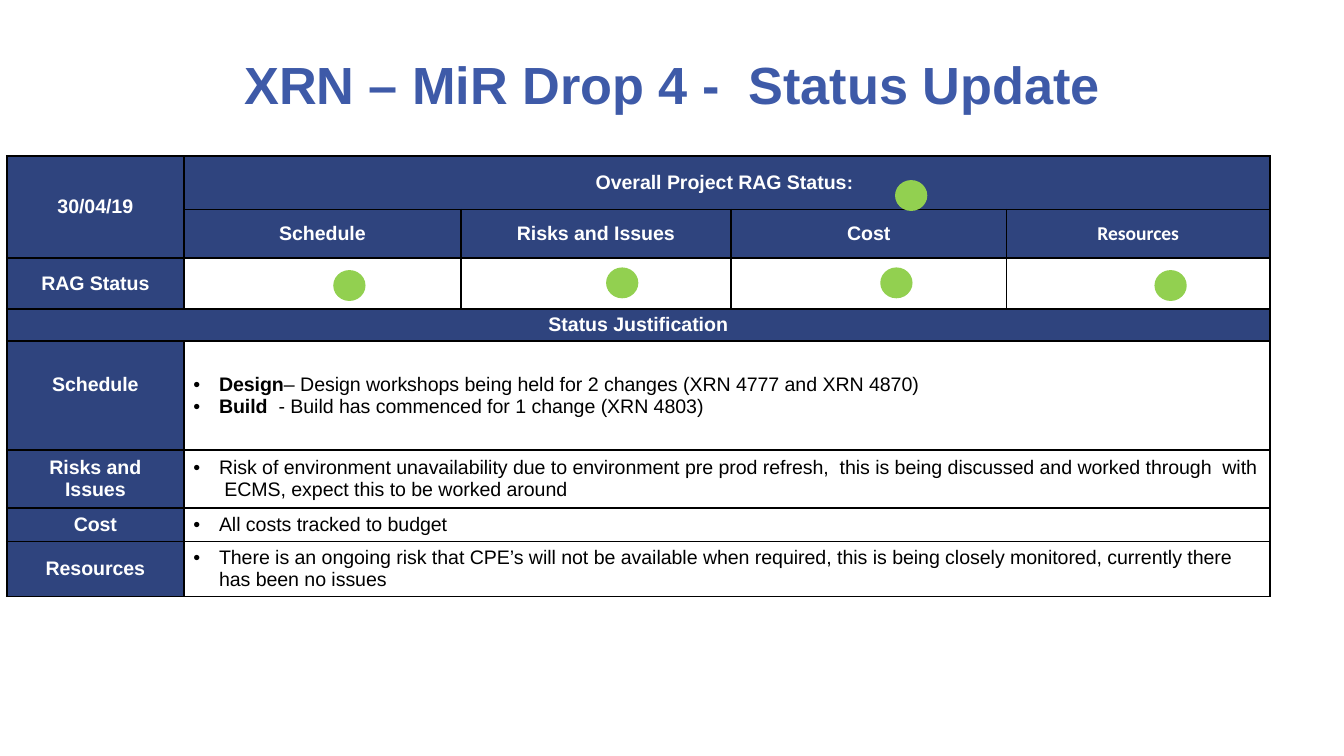
from lxml.etree import SubElement
from pptx import Presentation
from pptx.dml.color import RGBColor
from pptx.enum.shapes import MSO_SHAPE as Shape
from pptx.enum.text import MSO_ANCHOR as Anchor, PP_ALIGN as Align
from pptx.oxml.ns import qn
from pptx.util import Inches, Pt

NAVY, WHITE, BLACK, GREEN, BLUE = "2F447E", "FFFFFF", "000000", "92D050", "3E5AA8"
GRID = 0.1  # inches per grid column and row


def color(hex_string):
    return RGBColor.from_string(hex_string)


def grid(steps):
    return Inches(steps * GRID)


class StatusSlide:
    """Holds the style and the current slide."""
    font = "Arial"
    size = 10.5

    def __init__(self, presentation):
        self.slide = presentation.slides.add_slide(presentation.slide_layouts[6])

    def style(self, run, size, hex_string, bold, font=None):
        run.font.name = font or self.font
        run.font.size = Pt(size)
        run.font.bold = bold
        run.font.color.rgb = color(hex_string)

    def title(self, text, left, top, width, height):
        frame = self.slide.shapes.add_textbox(*map(grid, (left, top, width, height))).text_frame
        frame.word_wrap = True
        frame.vertical_anchor = Anchor.MIDDLE
        frame.text = text
        frame.paragraphs[0].alignment = Align.CENTER
        self.style(frame.paragraphs[0].runs[0], 28, BLUE, True)

    def table(self, left, top, columns, rows):
        frame = self.slide.shapes.add_table(len(rows), len(columns), *map(
            grid, (left, top, sum(columns), sum(rows))))
        table = frame.table
        for column, width in zip(table.columns, columns):
            column.width = grid(width)
        for row, height in zip(table.rows, rows):
            row.height = grid(height)
        for cell in table.iter_cells():
            self.border(cell)
            cell.fill.solid()
            cell.fill.fore_color.rgb = color(WHITE)
            cell.vertical_anchor = Anchor.MIDDLE
            cell.margin_left = cell.margin_right = Inches(0.07)
            cell.margin_top = cell.margin_bottom = 0
        return table

    def border(self, cell):
        properties = cell._tc.get_or_add_tcPr()
        for side in ("a:lnL", "a:lnR", "a:lnT", "a:lnB"):
            line = SubElement(properties, qn(side), w=str(Pt(1)))
            fill = SubElement(line, qn("a:solidFill"))
            SubElement(fill, qn("a:srgbClr"), val=BLACK)

    def heading(self, cell, text, font=None):
        cell.fill.fore_color.rgb = color(NAVY)
        cell.margin_left = cell.margin_right = Inches(0.08)
        cell.margin_top = cell.margin_bottom = Inches(0.03)
        cell.text_frame.text = text
        paragraph = cell.text_frame.paragraphs[0]
        paragraph.alignment = Align.CENTER
        self.style(paragraph.runs[0], self.size, WHITE, True, font)

    def bullets(self, cell, items):
        cell.margin_top = cell.margin_bottom = Inches(0.03)
        frame = cell.text_frame
        for index, (lead, text) in enumerate(items):
            paragraph = frame.add_paragraph() if index else frame.paragraphs[0]
            properties = paragraph._p.get_or_add_pPr()
            properties.set("marL", str(Inches(0.19)))
            properties.set("indent", str(-Inches(0.19)))
            SubElement(properties, qn("a:buFont"), typeface=self.font)
            SubElement(properties, qn("a:buChar"), char="•")
            for words, bold in ((lead, True), (text, False)):
                if words:
                    run = paragraph.add_run()
                    run.text = words
                    self.style(run, self.size, BLACK, bold)

    def dot(self, left, top):
        shape = self.slide.shapes.add_shape(Shape.OVAL, *map(grid, (left, top, 2.4, 2.3)))
        shape.shadow.inherit = False
        shape.fill.solid()
        shape.fill.fore_color.rgb = color(GREEN)
        shape.line.fill.background()


def main():
    presentation = Presentation()
    presentation.slide_width = Inches(10)
    presentation.slide_height = Inches(10) * 9 // 16
    status = StatusSlide(presentation)
    status.title("XRN – MiR Drop 4 -  Status Update", 5, 2.75, 90, 7)

    # Table grid and merged cells
    table = status.table(0.5, 11.6, (13.2, 20.6, 20.1, 20.5, 19.6),
                         (4, 3.6, 3.8, 2.4, 8.1, 4.3, 2.5, 4))
    table.cell(0, 0).merge(table.cell(1, 0))
    table.cell(0, 1).merge(table.cell(0, 4))
    table.cell(3, 0).merge(table.cell(3, 4))

    # Heading rows
    status.heading(table.cell(0, 0), "30/04/19")
    status.heading(table.cell(0, 1), "Overall Project RAG Status")
    colon = table.cell(0, 1).text_frame.paragraphs[0].add_run()
    colon.text = ": "
    status.style(colon, 10, WHITE, True)
    status.heading(table.cell(2, 0), "RAG Status")
    status.heading(table.cell(3, 0), "Status Justification")

    # Each topic heads one column and one justification row
    topics = {
        "Schedule": [
            ("Design", "– Design workshops being held for 2 changes (XRN 4777 and XRN 4870)"),
            ("Build", "  - Build has commenced for 1 change (XRN 4803)")],
        "Risks and Issues": [
            ("", "Risk of environment unavailability due to environment pre prod refresh,  this is "
                 "being discussed and worked through  with  ECMS, expect this to be worked around")],
        "Cost": [("", "All costs tracked to budget")],
        "Resources": [
            ("", "There is an ongoing risk that CPE’s will not be available when required, this is "
                 "being closely monitored, currently there has been no issues")],
    }
    for index, (topic, items) in enumerate(topics.items()):
        column, row = index + 1, index + 4
        status.heading(table.cell(1, column), topic,
                       "Calibri" if topic == "Resources" else None)
        status.heading(table.cell(row, 0), topic)
        table.cell(row, 1).merge(table.cell(row, 4))
        status.bullets(table.cell(row, 1), items)
    table.cell(4, 0).margin_bottom = Inches(0.2)  # lifts the label to the first bullet

    # RAG dots: overall, then one for each topic
    for left, top in ((66.6, 13.4), (24.8, 20.1), (45.1, 19.9), (65.5, 19.9), (85.9, 20.1)):
        status.dot(left, top)

    presentation.save("out.pptx")


if __name__ == "__main__":
    main()
